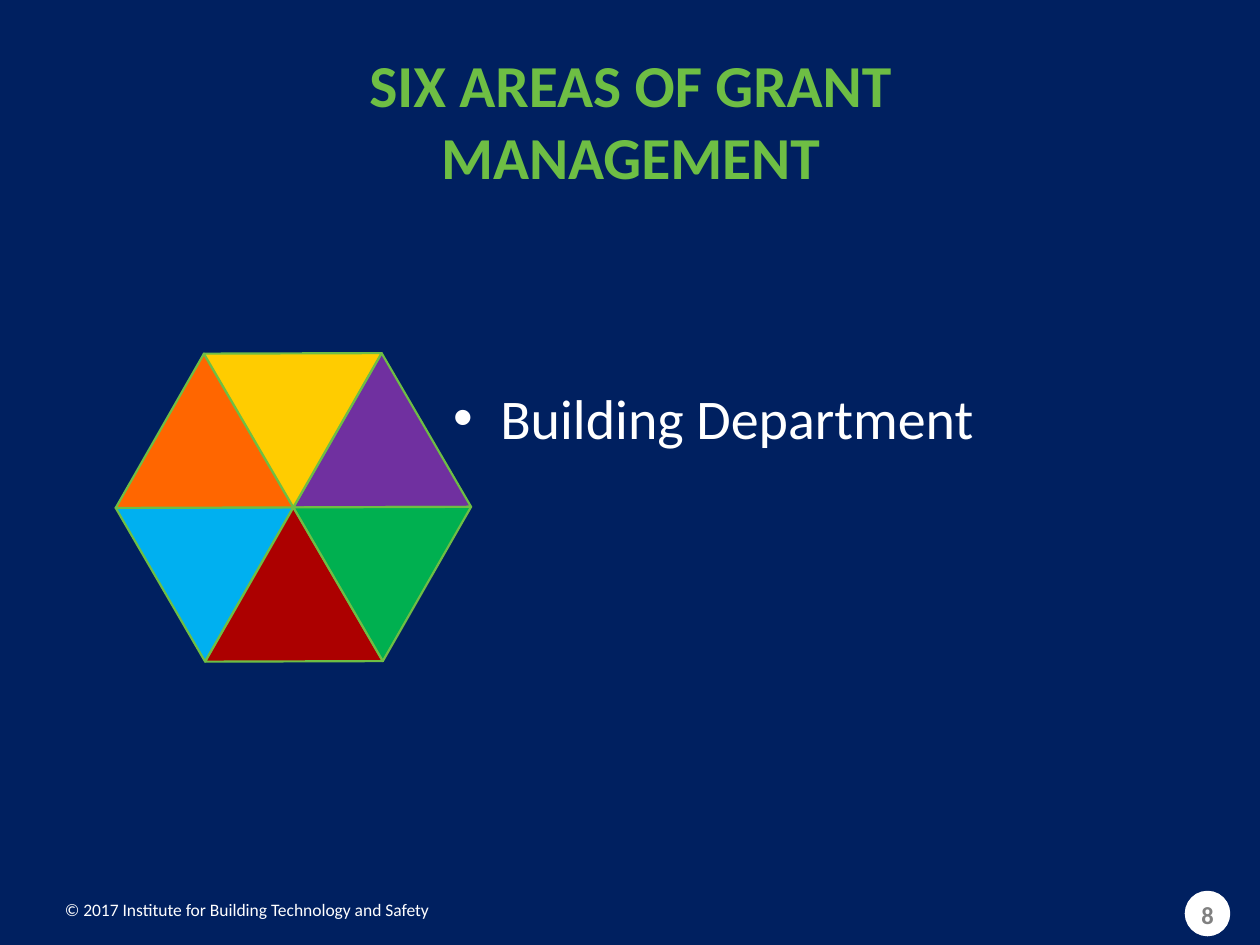
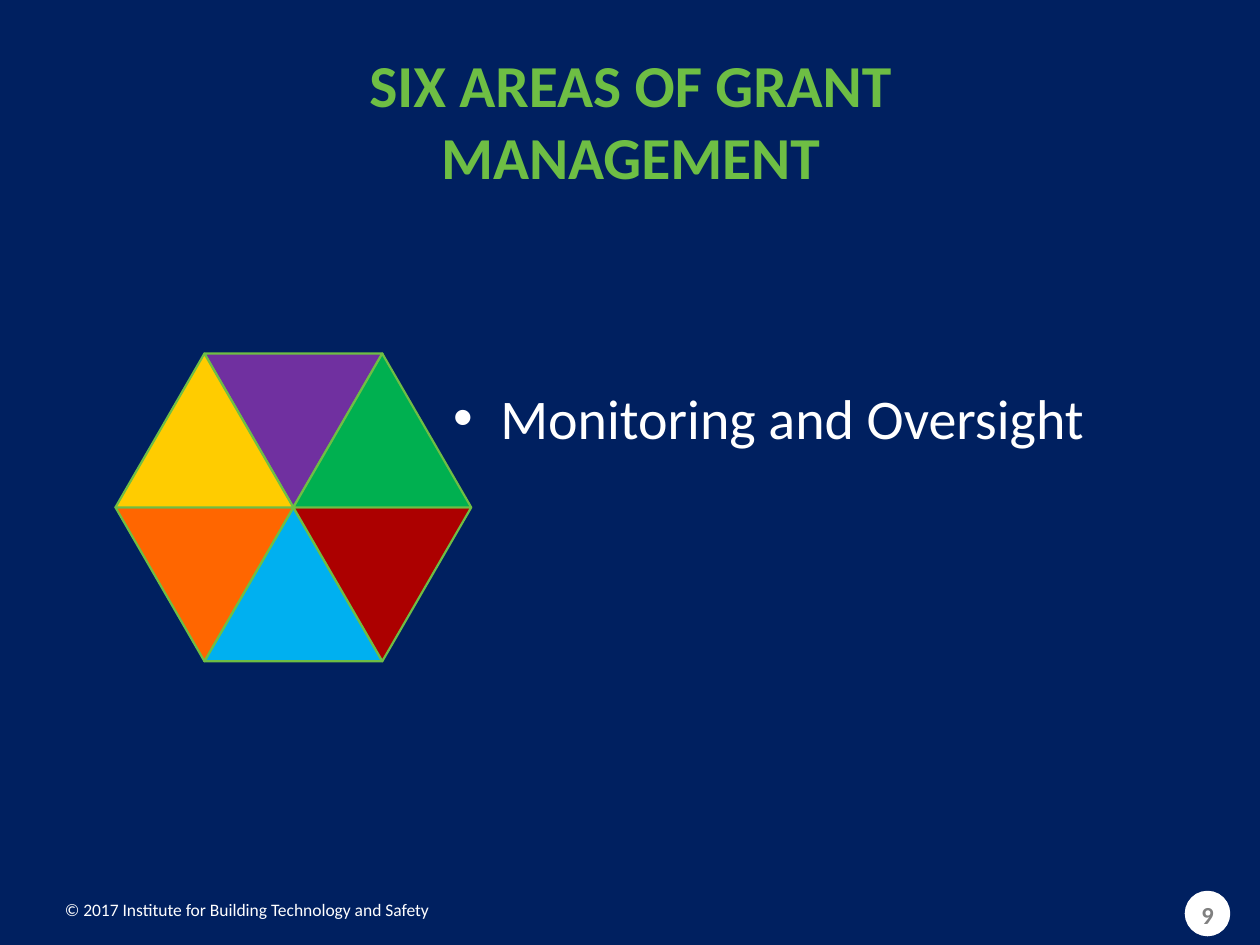
import math

import pptx
import pptx.util
import pptx.dml.color
import pptx.enum.shapes
import pptx.enum.text

RGBColor = pptx.dml.color.RGBColor
MSO_SHAPE = pptx.enum.shapes.MSO_SHAPE
MSO_ANCHOR = pptx.enum.text.MSO_ANCHOR
PP_ALIGN = pptx.enum.text.PP_ALIGN

NAVY = RGBColor(0x00, 0x20, 0x60)
LIME = RGBColor(0x6E, 0xBE, 0x44)
WHITE = RGBColor(0xFF, 0xFF, 0xFF)
GREY = RGBColor(0x80, 0x80, 0x80)
ORANGE = RGBColor(0xFF, 0x66, 0x00)
YELLOW = RGBColor(0xFF, 0xCC, 0x00)
PURPLE = RGBColor(0x70, 0x30, 0xA0)
GREEN = RGBColor(0x00, 0xB0, 0x50)
RED = RGBColor(0xAC, 0x00, 0x00)
BLUE = RGBColor(0x00, 0xB0, 0xF0)

FONT = "Calibri"
WIDTH, HEIGHT = pptx.util.Inches(10), pptx.util.Inches(7.5)
COLUMNS, ROWS = 120, 90

TITLE_BOX = (16.9, 4, 86.3, 7.4)
WHEEL_BOX = (11, 33.67, 33.88, 29.3)
COPYRIGHT_BOX = (5, 85, 78, 4)
BADGE_BOX = (113, 85, 4, 4)
NUMBER_BOX = (112, 84.67, 6, 4.8)
BODY_LEFT, BODY_TOP, BODY_HEIGHT = 41.95, 35.9, 7

TITLE = "SIX AREAS OF GRANT MANAGEMENT"
COPYRIGHT = "© 2017 Institute for Building Technology and Safety"
WHEEL_CELLS = [(PURPLE, 1, 0), (BLUE, 1, 1), (RED, 2, 1),
               (ORANGE, 0, 1), (GREEN, 2, 0), (YELLOW, 0, 0)]
AREAS = [("Building Department", 58, 59.8), ("Monitoring and Oversight", 66, 0)]
FIRST_NUMBER = 8


def on_grid(box):
    x, y, w, h = box
    return (round(WIDTH * x / COLUMNS), round(HEIGHT * y / ROWS),
            round(WIDTH * w / COLUMNS), round(HEIGHT * h / ROWS))


def write(sp, text, size, color, align=PP_ALIGN.LEFT, bold=False):
    tf = sp.text_frame
    tf.text = text
    tf.word_wrap = True
    tf.auto_size = pptx.enum.text.MSO_AUTO_SIZE.NONE
    tf.vertical_anchor = MSO_ANCHOR.TOP
    p = tf.paragraphs[0]
    p.alignment = align
    p.space_before = pptx.util.Pt(0)
    font = p.runs[0].font
    font.name, font.size, font.bold = FONT, pptx.util.Pt(size), bold
    font.color.rgb = color


def fill_placeholder(sp, box, text, size, color, **style):
    sp.left, sp.top, sp.width, sp.height = on_grid(box)
    write(sp, text, size, color, **style)


def add_shape(s, kind, box, fill, line, weight):
    sp = s.shapes.add_shape(kind, *on_grid(box))
    sp.shadow.inherit = False
    sp.fill.solid()
    sp.fill.fore_color.rgb = fill
    sp.line.color.rgb = line
    sp.line.width = pptx.util.Pt(weight)
    return sp


def add_wheel(s, box, turn):
    x, y, w, h = box
    side, rise = w / 2, h / 2
    cos, sin = math.cos(math.radians(turn)), math.sin(math.radians(turn))
    for color, col, row in WHEEL_CELLS:
        dx, dy = (col - 1) * side / 2, (row - 0.5) * rise
        center_x = x + side + dx * cos - dy * sin
        center_y = y + rise + dx * sin + dy * cos
        cell = (center_x - side / 2, center_y - rise / 2, side, rise)
        sp = add_shape(s, MSO_SHAPE.ISOSCELES_TRIANGLE, cell, color, LIME, 1.25)
        sp.rotation = turn + 180 * ((col + row) % 2)


def add_footer(s, number):
    write(s.shapes.add_textbox(*on_grid(COPYRIGHT_BOX)), COPYRIGHT, 10, WHITE)
    add_shape(s, MSO_SHAPE.OVAL, BADGE_BOX, WHITE, WHITE, 2)
    sp = s.shapes.add_textbox(*on_grid(NUMBER_BOX))
    write(sp, str(number), 14, GREY, PP_ALIGN.CENTER, True)
    sp.text_frame.vertical_anchor = MSO_ANCHOR.MIDDLE


def add_area_slide(prs, number, area, body_width, turn):
    s = prs.slides.add_slide(prs.slide_layouts[1])
    add_footer(s, number)
    add_wheel(s, WHEEL_BOX, turn)
    body_box = (BODY_LEFT, BODY_TOP, body_width, BODY_HEIGHT)
    fill_placeholder(s.placeholders[1], body_box, area, 32, WHITE)
    fill_placeholder(s.shapes.title, TITLE_BOX, TITLE, 34, LIME,
                     align=PP_ALIGN.CENTER, bold=True)


def main():
    prs = pptx.Presentation()
    prs.slide_width, prs.slide_height = WIDTH, HEIGHT
    background = prs.slide_master.background.fill
    background.solid()
    background.fore_color.rgb = NAVY
    for number, (area, body_width, turn) in enumerate(AREAS, FIRST_NUMBER):
        add_area_slide(prs, number, area, body_width, turn)
    prs.save("out.pptx")


if __name__ == "__main__":
    main()
